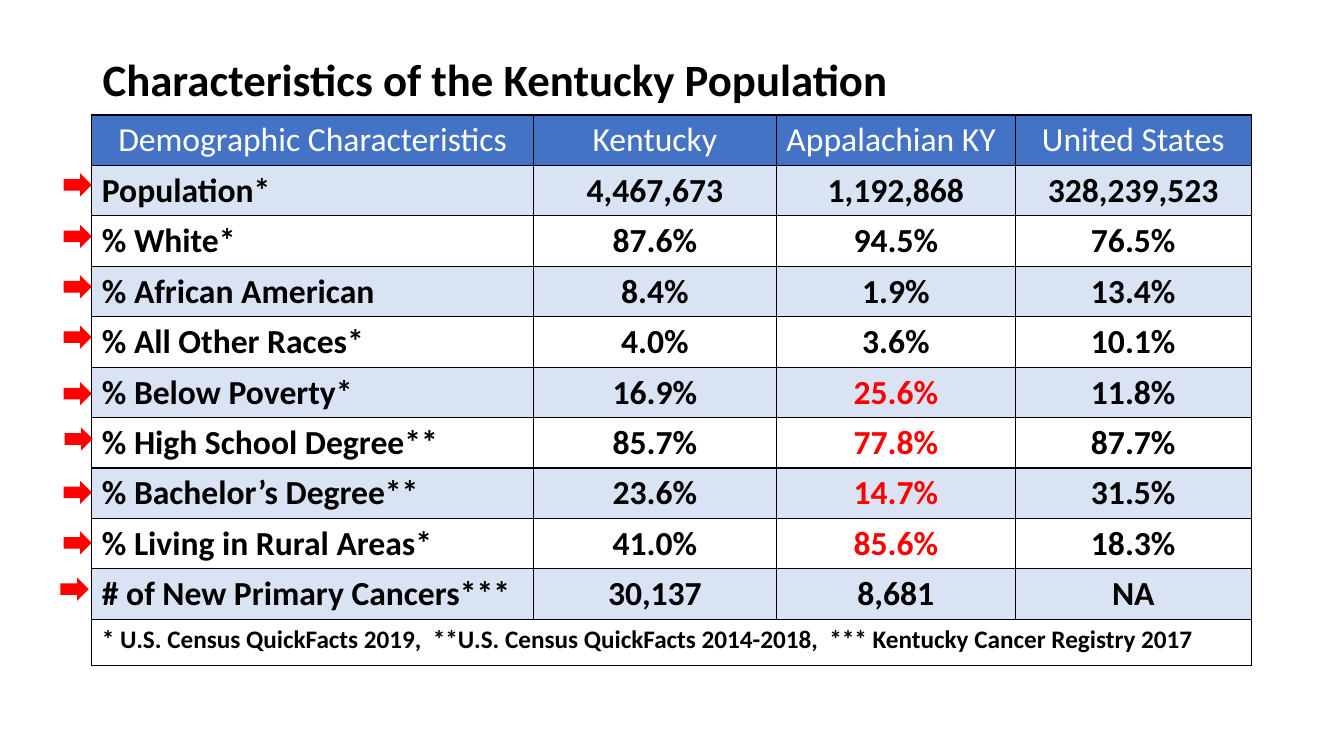
from dataclasses import dataclass

from lxml import etree
from pptx import Presentation
from pptx.dml.color import RGBColor
from pptx.enum.shapes import MSO_SHAPE
from pptx.enum.text import MSO_ANCHOR, PP_ALIGN
from pptx.oxml.ns import qn
from pptx.util import Inches, Pt

LEFT, CENTER = PP_ALIGN.LEFT, PP_ALIGN.CENTER
MIDDLE = MSO_ANCHOR.MIDDLE
ARROW = MSO_SHAPE.RIGHT_ARROW
BLANK = 6


@dataclass(frozen=True)
class Theme:
    """Colours, font and type sizes of the slide."""
    font: str = "Calibri"
    ink: str = "000000"
    paper: str = "FFFFFF"
    header: str = "4472C4"
    band: str = "DAE3F3"
    accent: str = "FF0000"
    title: int = 32
    body: int = 24
    note: int = 18


class SlideBuilder:
    """Adds styled elements to one slide, with lengths in percent of its size."""

    def __init__(self, prs, theme):
        """Start a blank slide."""
        self.prs, self.theme = prs, theme
        self.s = prs.slides.add_slide(prs.slide_layouts[BLANK])

    def x(self, share):
        """Convert a percentage of the slide width."""
        return round(self.prs.slide_width * share / 100)

    def y(self, share):
        """Convert a percentage of the slide height."""
        return round(self.prs.slide_height * share / 100)

    def box(self, left, top, width, height):
        """Convert a rectangle given in percent."""
        return self.x(left), self.y(top), self.x(width), self.y(height)

    def add_text(self, tf, text, size, color, bold=True, align=LEFT):
        """Put one styled paragraph into a text frame."""
        p = tf.paragraphs[0]
        p.alignment = align
        r = p.add_run()
        r.text = text
        fmt = {"name": self.theme.font, "size": Pt(size), "bold": bold}
        for key, value in fmt.items():
            setattr(r.font, key, value)
        r.font.color.rgb = RGBColor.from_string(color)
        return p

    def title(self, text, *area):
        """Add the slide heading."""
        tf = self.s.shapes.add_textbox(*self.box(*area)).text_frame
        for key, value in {"word_wrap": True, "vertical_anchor": MIDDLE}.items():
            setattr(tf, key, value)
        p = self.add_text(tf, text, self.theme.title, self.theme.ink)
        p.line_spacing = 0.9

    def arrow(self, *area):
        """Add a row marker."""
        sp = self.s.shapes.add_shape(ARROW, *self.box(*area))
        sp.shadow.inherit = False
        sp.fill.solid()
        sp.fill.fore_color.rgb = RGBColor.from_string(self.theme.accent)
        sp.line.fill.background()

    def paint(self, cell, fill):
        """Give a cell thin borders and a fill."""
        tc_pr = cell._tc.get_or_add_tcPr()
        for side in ("lnL", "lnR", "lnT", "lnB"):
            ln = etree.SubElement(tc_pr, qn(f"a:{side}"), w=str(Pt(1)))
            solid = etree.SubElement(ln, qn("a:solidFill"))
            etree.SubElement(solid, qn("a:srgbClr"), val=self.theme.ink)
        cell.fill.solid()
        cell.fill.fore_color.rgb = RGBColor.from_string(fill)

    def table(self, header, rows, note, alerts, left, top, widths, row_height):
        """Add the banded table with a header and a merged note row."""
        t = self.theme
        count = len(rows) + 2
        area = self.box(left, top, sum(widths), row_height * count)
        tbl = self.s.shapes.add_table(count, len(widths), *area).table
        for key in ("first_row", "horz_banding"):
            setattr(tbl, key, False)
        for col, width in zip(tbl.columns, widths):
            col.width = self.x(width)
        for i, row in enumerate(tbl.rows):
            fill = t.header if i == 0 else t.band if i % 2 and i < count - 1 else t.paper
            for cell in row.cells:
                self.paint(cell, fill)
        for j, text in enumerate(header):
            align = LEFT if j == 2 else CENTER
            self.add_text(tbl.cell(0, j).text_frame, text, t.body, t.paper, False, align)
        for i, row in enumerate(rows, 1):
            for j, text in enumerate(row):
                color = t.accent if text in alerts else t.ink
                align = CENTER if j else LEFT
                self.add_text(tbl.cell(i, j).text_frame, text, t.body, color, align=align)
        foot = tbl.cell(count - 1, 0)
        foot.merge(tbl.cell(count - 1, len(widths) - 1))
        self.add_text(foot.text_frame, note, t.note, t.ink)


HEADER = ("Demographic Characteristics", "Kentucky", "Appalachian KY", "United States")
ROWS = (
    ("Population*", "4,467,673", "1,192,868", "328,239,523"),
    ("% White*", "87.6%", "94.5%", "76.5%"),
    ("% African American", "8.4%", "1.9%", "13.4%"),
    ("% All Other Races*", "4.0%", "3.6%", "10.1%"),
    ("% Below Poverty*", "16.9%", "25.6%", "11.8%"),
    ("% High School Degree**", "85.7%", "77.8%", "87.7%"),
    ("% Bachelor’s Degree**", "23.6%", "14.7%", "31.5%"),
    ("% Living in Rural Areas*", "41.0%", "85.6%", "18.3%"),
    ("# of New Primary Cancers***", "30,137", "8,681", "NA"),
)
ALERTS = {"25.6%", "77.8%", "14.7%", "85.6%"}
NOTE = ("* U.S. Census QuickFacts 2019,  **U.S. Census QuickFacts 2014-2018,  "
        "*** Kentucky Cancer Registry 2017")
ARROW_TOPS = (22.93, 29.73, 36.4, 43.07, 50.53, 56.53, 63.6, 70.27, 76.4)
ARROW_LEFTS = (4.73,) * 5 + (4.8, 4.73, 4.73, 4.5)


def main():
    """Build and save the slide."""
    prs = Presentation()
    prs.slide_width, prs.slide_height = Inches(13.33), Inches(7.5)
    slide = SlideBuilder(prs, Theme())
    slide.title("Characteristics of the Kentucky Population", 6.9, 5.33, 86.27, 10.93)
    slide.table(HEADER, ROWS, NOTE, ALERTS, 6.83, 15.2,
                (32.86, 18.08, 17.78, 17.55), 6.13)
    for left, top in zip(ARROW_LEFTS, ARROW_TOPS):
        slide.arrow(left, top, 2.1, 3.07)
    prs.save("out.pptx")


if __name__ == "__main__":
    main()
